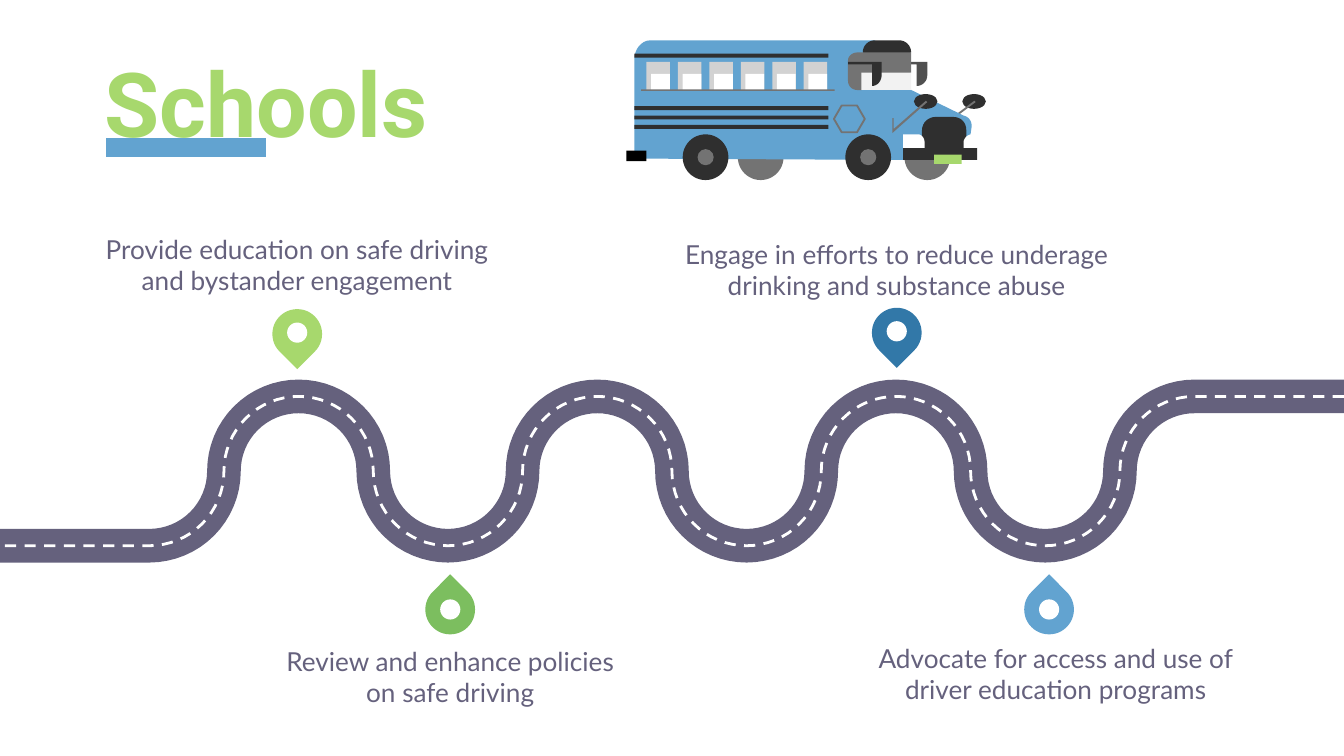
from dataclasses import dataclass
from math import cos, pi, sin

from pptx import Presentation, util as u
from pptx.dml.color import RGBColor
from pptx.enum import dml, shapes, text
from pptx.oxml import parse_xml
from pptx.oxml.ns import nsdecls

WIDE = 10
HIGH = WIDE * 9 / 16
COL = WIDE / 18      # road grid: one column is the radius of a bend
CELL = 0.01          # bus grid

LIME = RGBColor(0xA7, 0xD8, 0x6D)
GREEN = RGBColor(0x7C, 0xBE, 0x5F)
SKY = RGBColor(0x62, 0xA3, 0xD0)
BLUE = RGBColor(0x32, 0x78, 0xA8)
SLATE = RGBColor(0x65, 0x61, 0x7D)
WHITE = RGBColor(0xFF, 0xFF, 0xFF)
PALE = RGBColor(0xF2, 0xF2, 0xF2)
SILVER = RGBColor(0xD2, 0xD2, 0xD2)
GREY = RGBColor(0x73, 0x73, 0x73)
DIM = RGBColor(0x50, 0x50, 0x50)
DARK = RGBColor(0x2F, 0x2F, 0x2F)
BLACK = RGBColor(0, 0, 0)

KIND = shapes.MSO_SHAPE
RECT, OVAL = KIND.RECTANGLE, KIND.OVAL


@dataclass
class Stop:
    """A step on the road; col and mid are road columns of pin and label."""
    words: str
    ink: RGBColor
    col: float
    top: float
    mid: float
    row: float
    wide: float
    above: bool


@dataclass
class Part:
    """A preset shape on the bus grid."""
    kind: shapes.MSO_SHAPE
    x: float
    y: float
    w: float
    h: float
    ink: RGBColor


@dataclass
class Panel:
    """An outline on the bus grid; six numbers make a cubic curve."""
    ink: RGBColor
    steps: list[tuple]


STOPS = [
    Stop("Provide education on safe driving and bystander engagement",
         LIME, 3.98, 2.3, 3.98, 1.62, 3.17, True),
    Stop("Engage in efforts to reduce underage drinking and substance abuse",
         BLUE, 12.01, 2.29, 12.01, 1.66, 3.58, True),
    Stop("Advocate for access and use of driver education programs",
         SKY, 14.05, 4.35, 14.14, 4.78, 2.77, False),
    Stop("Review and enhance policies on safe driving",
         GREEN, 6.03, 4.35, 6.03, 4.8, 2.62, False),
]


def wheel(x: float) -> list[Part]:
    return [Part(OVAL, x, 100, 34, 34, DARK), Part(OVAL, x + 11, 111, 12, 12, GREY)]


def stripe(y: float) -> Part:
    return Part(RECT, 472, y, 144.5, 3, DARK)


def pane(x: float) -> list[Part]:
    return [Part(RECT, x, 46, 17.5, 21, SILVER), Part(RECT, x + 3.5, 55, 14, 12, WHITE)]


BUS = [
    Part(OVAL, 716, 70, 17.5, 11, DARK),
    Panel(GREY, [(726, 76), (725, 75), (713, 84), (714, 85)]),
    Part(OVAL, 549, 100, 34, 34, GREY),
    Part(OVAL, 673, 100, 34, 34, GREY),
    Panel(SKY, [(484, 30), (651, 30), (678, 67), (717, 86), (721, 87, 723, 90, 723, 94),
                (722, 101), (722, 106), (672, 119), (472, 118), (472, 44),
                (472, 37, 477, 30, 484, 30)]),
    *[stripe(79 + 7 * i) for i in range(3)],
    *[bit for i in range(6) for bit in pane(481 + 23.4 * i)],
    Part(RECT, 466, 112, 15, 8, BLACK),
    *wheel(508),
    *wheel(629),
    Part(OVAL, 680, 70, 17.5, 11, DARK),
    Panel(GREY, [(664, 99), (690, 76), (689, 75), (665, 96), (665, 88), (664, 88)]),
    Panel(DARK, [(686, 104), (686, 97), (686, 91, 691, 87, 696, 87), (709, 87),
                 (715, 87, 719, 91, 719, 97), (719, 104), (727, 110), (727, 119),
                 (672, 119), (672, 110)]),
    Part(RECT, 695, 115, 20.5, 7, LIME),
    Panel(WHITE, [(672, 110), (688, 110), (688, 106), (688, 103, 686, 100, 683, 100),
                  (672, 100)]),
    Panel(WHITE, [(727, 110), (717, 110), (717, 106), (717, 103, 720, 100, 723, 100),
                  (727, 100)]),
    Panel(DARK, [(678, 39), (678, 39, 673, 42, 660, 42), (646, 42, 642, 39, 642, 39),
                 (642, 34, 646, 30, 651, 30), (669, 30), (674, 30, 678, 34, 678, 39)]),
    Panel(DIM, [(676, 46), (690, 46), (690, 56), (690, 60, 687, 64, 682, 64),
                (682, 48), (676, 48)]),
    Panel(GREY, [(638, 39), (678, 39), (678, 54), (641, 67), (638, 67),
                 (634, 67, 631, 64, 631, 60), (631, 45), (631, 42, 634, 39, 638, 39)]),
    Part(RECT, 641, 54, 37, 13, PALE),
    Panel(DARK, [(631, 46), (656, 46), (656, 56), (656, 60, 653, 64, 649, 64),
                 (649, 48), (631, 48)]),
    Part(RECT, 477, 66.5, 144, 1.2, GREY),
    stripe(40),
]


def paint(item, ink: RGBColor) -> None:
    item.shadow.inherit = False
    item.fill.solid()
    item.fill.fore_color.rgb = ink
    item.line.fill.background()


def place(tree, part: Part, unit: float = 1):
    box = [u.Inches(v * unit) for v in (part.x, part.y, part.w, part.h)]
    item = tree.add_shape(part.kind, *box)
    paint(item, part.ink)
    return item


def trace(tree, dots: list[tuple], close: bool):
    dots = [(u.Inches(x), u.Inches(y)) for x, y in dots]
    pen = tree.build_freeform(*dots[0])
    pen.add_line_segments(dots[1:], close=close)
    return pen.convert_to_shape()


def bend(start: tuple, curve: tuple, count: int = 8) -> list[tuple]:
    """Points along a cubic curve, without its start."""
    spots = [start, curve[:2], curve[2:4], curve[4:]]
    dots = []
    for i in range(1, count + 1):
        t = i / count
        mix = ((1 - t) ** 3, 3 * t * (1 - t) ** 2, 3 * t * t * (1 - t), t ** 3)
        dots.append(tuple(sum(m * s[k] for m, s in zip(mix, spots)) for k in (0, 1)))
    return dots


def draw_bus(tree) -> None:
    group = tree.add_group_shape().shapes
    for part in BUS:
        if isinstance(part, Part):
            place(group, part, CELL)
            continue
        dots = []
        for step in part.steps:
            dots += [step] if len(step) == 2 else bend(dots[-1], step)
        item = trace(group, [(x * CELL, y * CELL) for x, y in dots], True)
        paint(item, part.ink)
    badge = place(group, Part(KIND.HEXAGON, 620.5, 78.5, 23, 20, GREY), CELL)
    badge.adjustments[0] = 0.29
    badge.fill.background()
    badge.line.color.rgb = GREY
    badge.line.width = u.Pt(1)


def draw_road(tree) -> None:
    mid, count = 2.95 + COL, 32
    dots = [(WIDE, mid - COL)]
    for i, col in enumerate(range(16, 0, -2)):
        side = 1 if i % 2 else -1
        first = count // 2 if col == 16 else 0
        last = count // 2 if col == 2 else count
        for k in range(first, last + 1):
            turn = pi * k / count
            dots.append((COL * (col + cos(turn)), mid + side * COL * sin(turn)))
    dots.append((0, mid + COL))
    for ink, size, dash in ((SLATE, 18, None), (WHITE, 1.5, dml.MSO_LINE.DASH)):
        lane = trace(tree, dots, False)
        lane.shadow.inherit = False
        lane.fill.background()
        lane.line.color.rgb = ink
        lane.line.width = u.Pt(size)
        lane.line.dash_style = dash


def write(frame, words: str, font: str, size: float, ink: RGBColor, align, anchor) -> None:
    frame.margin_left = frame.margin_right = frame.margin_top = frame.margin_bottom = 0
    frame.word_wrap = True
    frame.auto_size = text.MSO_AUTO_SIZE.NONE
    frame.vertical_anchor = anchor
    line = frame.paragraphs[0]
    line.alignment = align
    run = line.add_run()
    run.text = words
    run.font.name, run.font.size = font, u.Pt(size)
    run.font.color.rgb = ink
    run.font.bold = font == "Roboto"


def draw_stop(tree, stop: Stop) -> None:
    pin, hole = 0.37, 0.15
    group = tree.add_group_shape().shapes
    left = stop.col * COL - pin / 2
    drop = place(group, Part(KIND.TEAR, left, stop.top, pin, pin, stop.ink))
    drop.rotation = 135 if stop.above else 315
    place(group, Part(OVAL, left + 0.11, stop.top + (0.1 if stop.above else 0.11),
                      hole, hole, WHITE))
    box = [u.Inches(v) for v in (stop.mid * COL - stop.wide / 2, stop.row, stop.wide, 0.58)]
    anchor = text.MSO_ANCHOR.BOTTOM if stop.above else text.MSO_ANCHOR.TOP
    write(tree.add_textbox(*box).text_frame, stop.words, "Lato", 14, SLATE,
          text.PP_ALIGN.CENTER, anchor)


def draw_title(tree) -> None:
    ends = [u.Inches(v) for v in (0.79, 1.1, 1.98, 1.1)]
    rule = tree.add_connector(shapes.MSO_CONNECTOR.STRAIGHT, *ends)
    rule.line.color.rgb = SKY
    rule.line.width = u.Pt(10)
    rule._element.spPr.append(parse_xml(f"<a:effectLst {nsdecls('a')}/>"))
    head = tree.title
    head.left, head.top, head.width, head.height = map(u.Inches, (0.78, 0.22, 2.92, 0.94))
    write(head.text_frame, "Schools", "Roboto", 48, LIME,
          text.PP_ALIGN.LEFT, text.MSO_ANCHOR.BOTTOM)


def main() -> None:
    deck = Presentation()
    deck.slide_width, deck.slide_height = u.Inches(WIDE), u.Inches(HIGH)
    tree = deck.slides.add_slide(deck.slide_layouts[5]).shapes
    draw_title(tree)
    draw_road(tree)
    for stop in STOPS:
        draw_stop(tree, stop)
    draw_bus(tree)
    deck.save("out.pptx")


if __name__ == "__main__":
    main()
